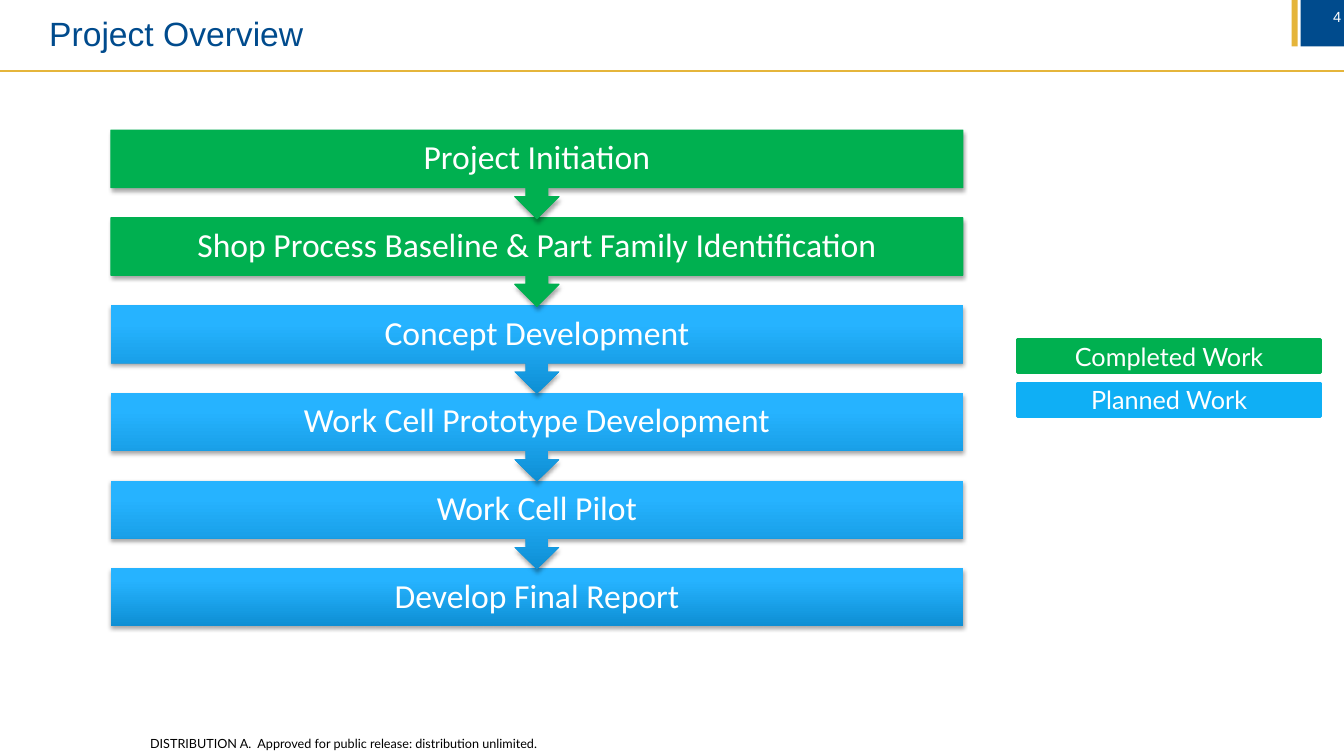
from lxml import etree
from pptx import Presentation
from pptx.dml.color import RGBColor
from pptx.enum.shapes import MSO_CONNECTOR, MSO_SHAPE
from pptx.enum.text import MSO_ANCHOR, PP_ALIGN
from pptx.oxml.ns import qn
from pptx.util import Emu, Pt

RECTANGLE = MSO_SHAPE.RECTANGLE
CALLOUT = MSO_SHAPE.DOWN_ARROW_CALLOUT
STRAIGHT = MSO_CONNECTOR.STRAIGHT
TOP, MIDDLE = MSO_ANCHOR.TOP, MSO_ANCHOR.MIDDLE
LEFT, CENTER, RIGHT = PP_ALIGN.LEFT, PP_ALIGN.CENTER, PP_ALIGN.RIGHT

NAVY = RGBColor(0x00, 0x4B, 0x8D)
GOLD = RGBColor(0xE5, 0xB5, 0x3B)
GREEN = RGBColor(0x00, 0xB0, 0x50)
BLUE = RGBColor(0x0F, 0xAF, 0xF5)
DEEP_BLUE = RGBColor(0x0E, 0x8F, 0xD4)
LIGHT_BLUE = RGBColor(0x26, 0xB3, 0xFF)
WHITE = RGBColor(0xFF, 0xFF, 0xFF)
BLACK = RGBColor(0x00, 0x00, 0x00)

STEPS = [
    ("Project Initiation", True),
    ("Shop Process Baseline & Part Family Identification", True),
    ("Concept Development", False),
    ("Work Cell Prototype Development", False),
    ("Work Cell Pilot", False),
    ("Develop Final Report", False),
]
LEGEND = [("Completed Work", GREEN), ("Planned Work", BLUE)]
CORNER_BARS = [((1290, 0, 43, 46), NAVY), ((1281, 0, 6, 46), GOLD)]

TITLE_FONT = {"name": "Arial", "size": Pt(24), "color": NAVY}
NUMBER_FONT = {"name": "Arial", "size": Pt(10.5), "color": WHITE}
FOOTER_FONT = {"name": "Lato", "size": Pt(9), "color": BLACK}
STEP_FONT = {"name": "Calibri", "size": Pt(24), "color": WHITE}
LEGEND_FONT = {"name": "Lato", "size": Pt(18), "color": WHITE}

LABELS = [
    ("Project Overview", (39, 8, 900, 92), TITLE_FONT, LEFT, TOP),
    ("4", (1295, 2, 45, 30), NUMBER_FONT, RIGHT, MIDDLE),
    ("DISTRIBUTION A.\u00a0 Approved for public release: distribution unlimited.".replace("\u00a0", " "),
     (139, 725, 409, 25), FOOTER_FONT, LEFT, TOP),
]

PX = 9144
SLIDE_WIDTH, SLIDE_HEIGHT = 1333, 750
RULE_TOP = 70
STEP_LEFT, STEP_TOP, STEP_WIDTH, STEP_PITCH = 110, 129, 845, 87
CALLOUT_HEIGHT, BAR_HEIGHT = 88, 57
LEGEND_LEFT, LEGEND_TOP, LEGEND_WIDTH, LEGEND_HEIGHT, LEGEND_PITCH = 1009, 337, 301, 33, 43


def px(*lengths):
    return [Emu(length * PX) for length in lengths]


def write(shape, text, style, align, anchor):
    frame = shape.text_frame
    frame.word_wrap = True
    frame.vertical_anchor = anchor
    para = frame.paragraphs[0]
    para.alignment = align
    span = para.add_run()
    span.text = text
    for key, value in style.items():
        if key == "color":
            span.font.color.rgb = value
        else:
            setattr(span.font, key, value)
    return frame


def add_block(page, kind, area, color, line_width=0):
    block = page.shapes.add_shape(kind, *px(*area))
    block.shadow.inherit = False
    block.fill.solid()
    block.fill.fore_color.rgb = color
    if line_width:
        block.line.color.rgb = color
        block.line.width = Pt(line_width)
    else:
        block.line.fill.background()
    return block


def add_shadow(shape):
    effects = shape._element.spPr.find(qn("a:effectLst"))
    shadow = etree.SubElement(effects, qn("a:outerShdw"), blurRad=str(Pt(3.1)),
                              dist=str(Pt(1.8)), dir="5400000", rotWithShape="0")
    tint = etree.SubElement(shadow, qn("a:srgbClr"), val=str(BLACK))
    etree.SubElement(tint, qn("a:alpha"), val="35000")


def fill_planned(shape):
    shape.fill.gradient()
    shape.fill.gradient_angle = 90
    stops = shape.fill.gradient_stops
    for stop, (position, color) in zip(stops, [(0, DEEP_BLUE), (0.8, LIGHT_BLUE)]):
        stop.position = position
        stop.color.rgb = color


def add_step(page, index, text, completed):
    is_last = index == len(STEPS) - 1
    kind, height = (RECTANGLE, BAR_HEIGHT) if is_last else (CALLOUT, CALLOUT_HEIGHT)
    area = (STEP_LEFT, STEP_TOP + index * STEP_PITCH, STEP_WIDTH, height)
    step = add_block(page, kind, area, GREEN, 0.75 if completed else 0)
    if not completed:
        fill_planned(step)
    add_shadow(step)
    frame = write(step, text, STEP_FONT, CENTER, MIDDLE)
    frame.margin_top = frame.margin_bottom = 0
    frame.paragraphs[0].line_spacing = 0.9


def main():
    deck = Presentation()
    deck.slide_width, deck.slide_height = px(SLIDE_WIDTH, SLIDE_HEIGHT)
    page = deck.slides.add_slide(deck.slide_layouts[6])

    for area, color in CORNER_BARS:
        add_block(page, RECTANGLE, area, color)
    rule = page.shapes.add_connector(STRAIGHT, *px(0, RULE_TOP, SLIDE_WIDTH, RULE_TOP))
    rule.line.color.rgb = GOLD
    rule.line.width = Pt(1.5)
    etree.SubElement(rule._element.spPr, qn("a:effectLst"))

    for text, area, style, align, anchor in LABELS:
        write(page.shapes.add_textbox(*px(*area)), text, style, align, anchor)

    for index, (text, completed) in reversed(list(enumerate(STEPS))):
        add_step(page, index, text, completed)

    for index, (text, color) in enumerate(LEGEND):
        area = (LEGEND_LEFT, LEGEND_TOP + index * LEGEND_PITCH, LEGEND_WIDTH, LEGEND_HEIGHT)
        write(add_block(page, RECTANGLE, area, color, 2), text, LEGEND_FONT, CENTER, MIDDLE)

    deck.save("out.pptx")


if __name__ == "__main__":
    main()
